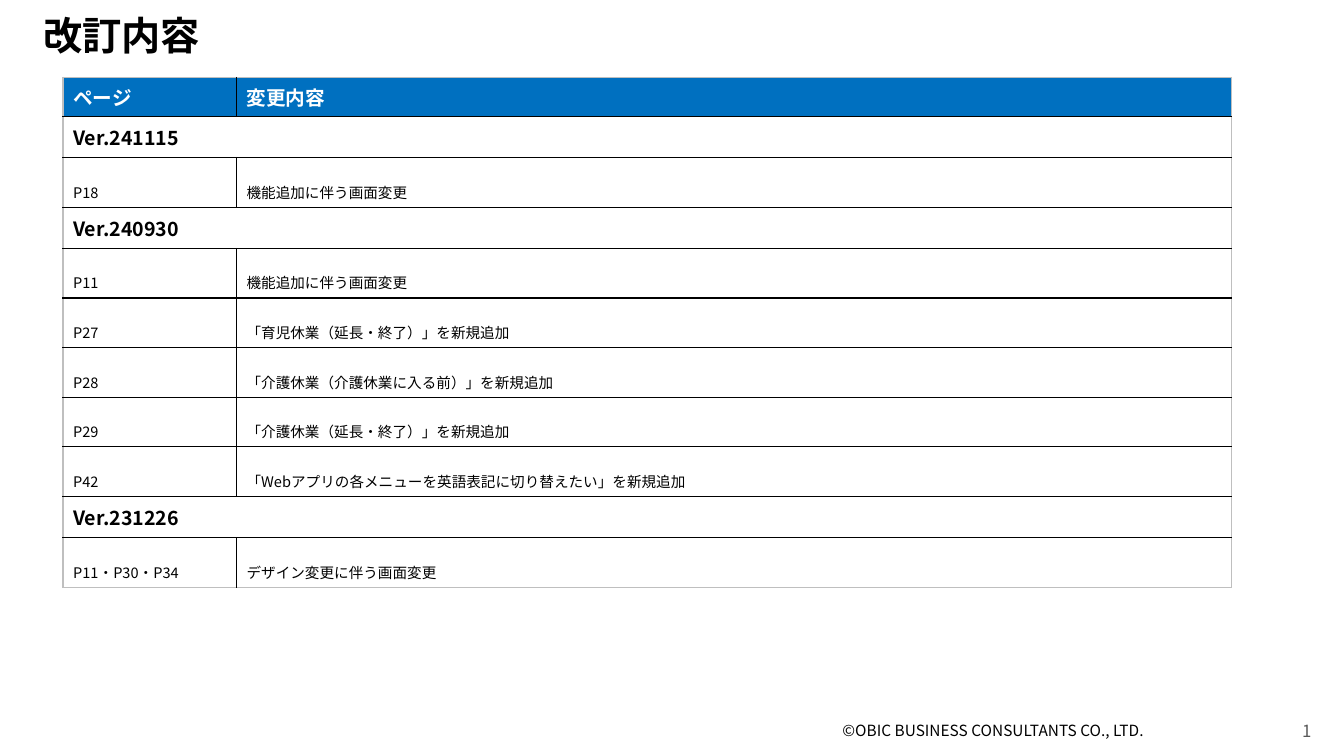
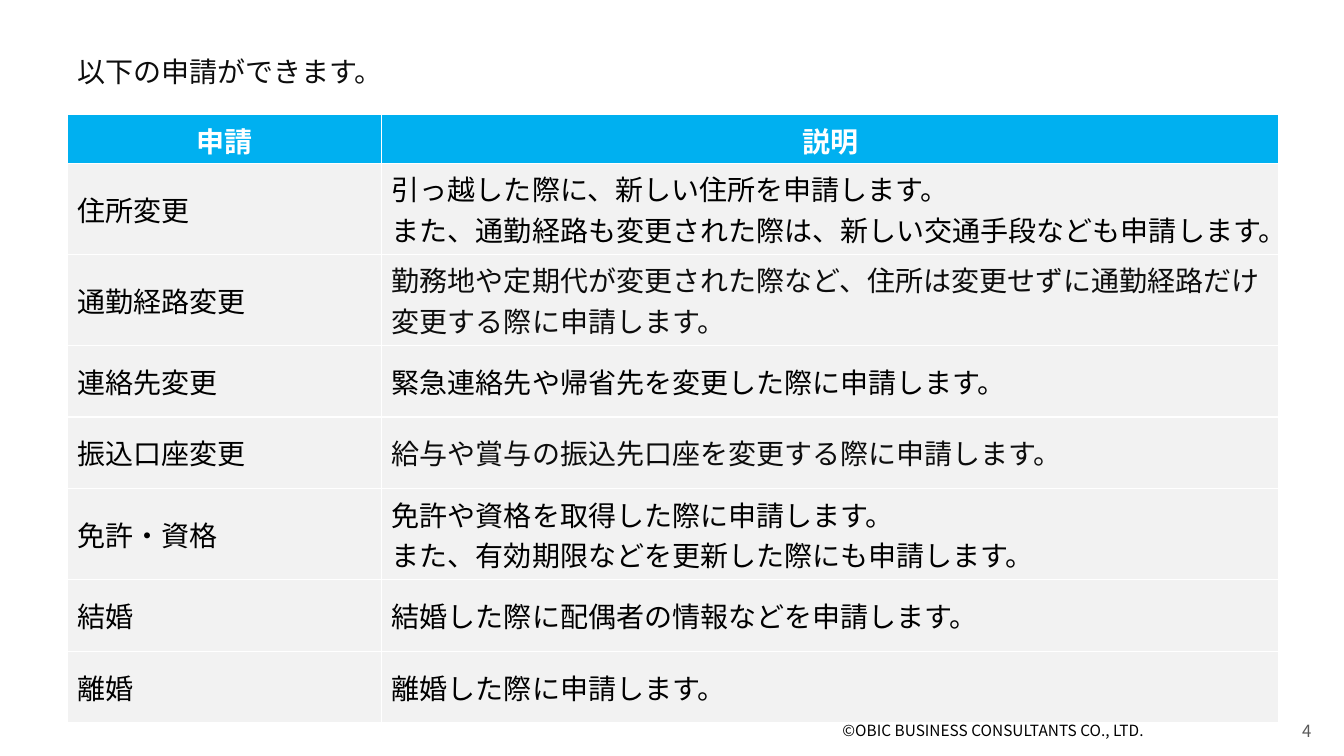
import pptx
import pptx.util
import pptx.dml.color
import pptx.enum.text
import pptx.oxml.ns
import lxml.etree

Cm = pptx.util.Cm
Pt = pptx.util.Pt
RGBColor = pptx.dml.color.RGBColor
PP_ALIGN = pptx.enum.text.PP_ALIGN
MSO_ANCHOR = pptx.enum.text.MSO_ANCHOR
qn = pptx.oxml.ns.qn

FONT = "Noto Sans CJK JP"
BLACK = RGBColor(0x00, 0x00, 0x00)
INK = RGBColor(0x0D, 0x0D, 0x0D)
WHITE = RGBColor(0xFF, 0xFF, 0xFF)
GRAY = RGBColor(0x59, 0x59, 0x59)
EDGE = RGBColor(0xBF, 0xBF, 0xBF)
BLUE = RGBColor(0x00, 0x70, 0xC0)
SKY = RGBColor(0x00, 0xB0, 0xF0)
PALE = RGBColor(0xF2, 0xF2, 0xF2)


def format_text(tf, size, color, bold=False, align=PP_ALIGN.LEFT, spacing=None, baseline=None):
    for p in tf.paragraphs:
        p.alignment = align
        p.line_spacing = spacing
        for r in p.runs:
            r.font.name = FONT
            r.font.size = Pt(size)
            r.font.bold = bold
            r.font.color.rgb = color
            rPr = r._r.get_or_add_rPr()
            rPr.set("lang", "ja-JP")
            if baseline:
                rPr.set("baseline", str(baseline))
            lxml.etree.SubElement(rPr, qn("a:ea")).set("typeface", FONT)


def add_border(cell, side, color, width):
    ln = lxml.etree.SubElement(cell._tc.get_or_add_tcPr(), qn("a:ln" + side))
    ln.set("w", str(Pt(width)))
    fill = lxml.etree.SubElement(ln, qn("a:solidFill"))
    lxml.etree.SubElement(fill, qn("a:srgbClr")).set("val", str(color))


prs = pptx.Presentation()
prs.slide_width = Cm(33.87)
prs.slide_height = Cm(19.05)
layout = prs.slide_layouts.get_by_name("Title Only")

titles = [
    ("改訂内容", "1", (0.84, 0.28, 31.88, 1.65), 28, BLACK, True, 0.9, MSO_ANCHOR.TOP),
    ("以下の申請ができます。", "4", (1.69, 1.08, 30.48, 1.19), 20, INK, False, 1.3, MSO_ANCHOR.MIDDLE),
]
for text, number, box, size, color, bold, spacing, anchor in titles:
    s = prs.slides.add_slide(layout)
    sp = s.shapes.title
    sp.left, sp.top, sp.width, sp.height = [Cm(v) for v in box]
    tf = sp.text_frame
    tf.text = text
    tf.word_wrap = True
    tf.auto_size = pptx.enum.text.MSO_AUTO_SIZE.NONE
    tf.vertical_anchor = anchor
    format_text(tf, size, color, bold, spacing=spacing)

    footers = [
        ("©OBIC BUSINESS CONSULTANTS CO., LTD.", 20.98, 11.43, 11, BLACK, PP_ALIGN.LEFT),
        (number, 25.68, 7.62, 12, GRAY, PP_ALIGN.RIGHT),
    ]
    for label, left, width, pt, ink, align in footers:
        tf = s.shapes.add_textbox(Cm(left), Cm(18.04), Cm(width), Cm(1.02)).text_frame
        tf.text = label
        tf.word_wrap = True
        format_text(tf, pt, ink, align=align)

revisions = [
    ("ページ", "変更内容"),
    ("Ver.241115",),
    ("P18", "機能追加に伴う画面変更"),
    ("Ver.240930",),
    ("P11", "機能追加に伴う画面変更"),
    ("P27", "「育児休業（延長・終了）」を新規追加"),
    ("P28", "「介護休業（介護休業に入る前）」を新規追加"),
    ("P29", "「介護休業（延長・終了）」を新規追加"),
    ("P42", "「Webアプリの各メニューを英語表記に切り替えたい」を新規追加"),
    ("Ver.231226",),
    ("P11・P30・P34", "デザイン変更に伴う画面変更"),
]
last = len(revisions) - 1
tbl = prs.slides[0].shapes.add_table(last + 1, 2, Cm(1.59), Cm(1.95), Cm(29.44), Cm(12.85)).table
tbl.first_row = False
tbl.horz_banding = False
tbl.columns[0].width = Cm(4.37)
tbl.columns[1].width = Cm(25.07)
for i, texts in enumerate(revisions):
    is_version = len(texts) == 1
    inner = EDGE if is_version else BLACK
    if is_version:
        tbl.rows[i].height = Cm(1.04)
        tbl.cell(i, 0).merge(tbl.cell(i, 1))
    else:
        tbl.rows[i].height = Cm(1.25 if i else 0.98)
    for j, text in enumerate(texts):
        cell = tbl.cell(i, j)
        add_border(cell, "L", inner if j else EDGE, 1)
        add_border(cell, "R", EDGE if j else inner, 1)
        add_border(cell, "T", BLACK if i else EDGE, 1)
        add_border(cell, "B", BLACK if i < last else EDGE, 1)
        cell.vertical_anchor = MSO_ANCHOR.MIDDLE
        cell.text_frame.text = text
        if i == 0:
            cell.fill.solid()
            cell.fill.fore_color.rgb = BLUE
            format_text(cell.text_frame, 14, WHITE, True)
        else:
            cell.fill.background()
            if is_version:
                format_text(cell.text_frame, 14, BLACK, True)
            else:
                format_text(cell.text_frame, 18, BLACK, baseline=-25000)

requests = [
    ("申請", "説明", 1.22, WHITE),
    ("住所変更", "引っ越した際に、新しい住所を申請します。\nまた、通勤経路も変更された際は、新しい交通手段なども申請します。", 2.3, BLACK),
    ("通勤経路変更", "勤務地や定期代が変更された際など、住所は変更せずに通勤経路だけ変更する際に申請します。", 2.3, INK),
    ("連絡先変更", "緊急連絡先や帰省先を変更した際に申請します。", 1.8, BLACK),
    ("振込口座変更", "給与や賞与の振込先口座を変更する際に申請します。", 1.8, INK),
    ("免許・資格", "免許や資格を取得した際に申請します。\nまた、有効期限などを更新した際にも申請します。", 2.3, BLACK),
    ("結婚", "結婚した際に配偶者の情報などを申請します。", 1.8, BLACK),
    ("離婚", "離婚した際に申請します。", 1.8, BLACK),
]
tbl = prs.slides[1].shapes.add_table(len(requests), 2, Cm(1.7), Cm(2.89), Cm(30.53), Cm(15.32)).table
tbl.horz_banding = False
tbl.columns[0].width = Cm(7.92)
tbl.columns[1].width = Cm(22.61)
for i, (name, description, height, color) in enumerate(requests):
    tbl.rows[i].height = Cm(height)
    for j, text in enumerate((name, description)):
        cell = tbl.cell(i, j)
        cell.vertical_anchor = MSO_ANCHOR.MIDDLE
        cell.fill.solid()
        cell.fill.fore_color.rgb = PALE if i else SKY
        cell.text_frame.text = text
        ink = color if j or i == 0 else BLACK
        align = PP_ALIGN.LEFT if i else PP_ALIGN.CENTER
        format_text(cell.text_frame, 20, ink, i == 0, align)

prs.save("out.pptx")
